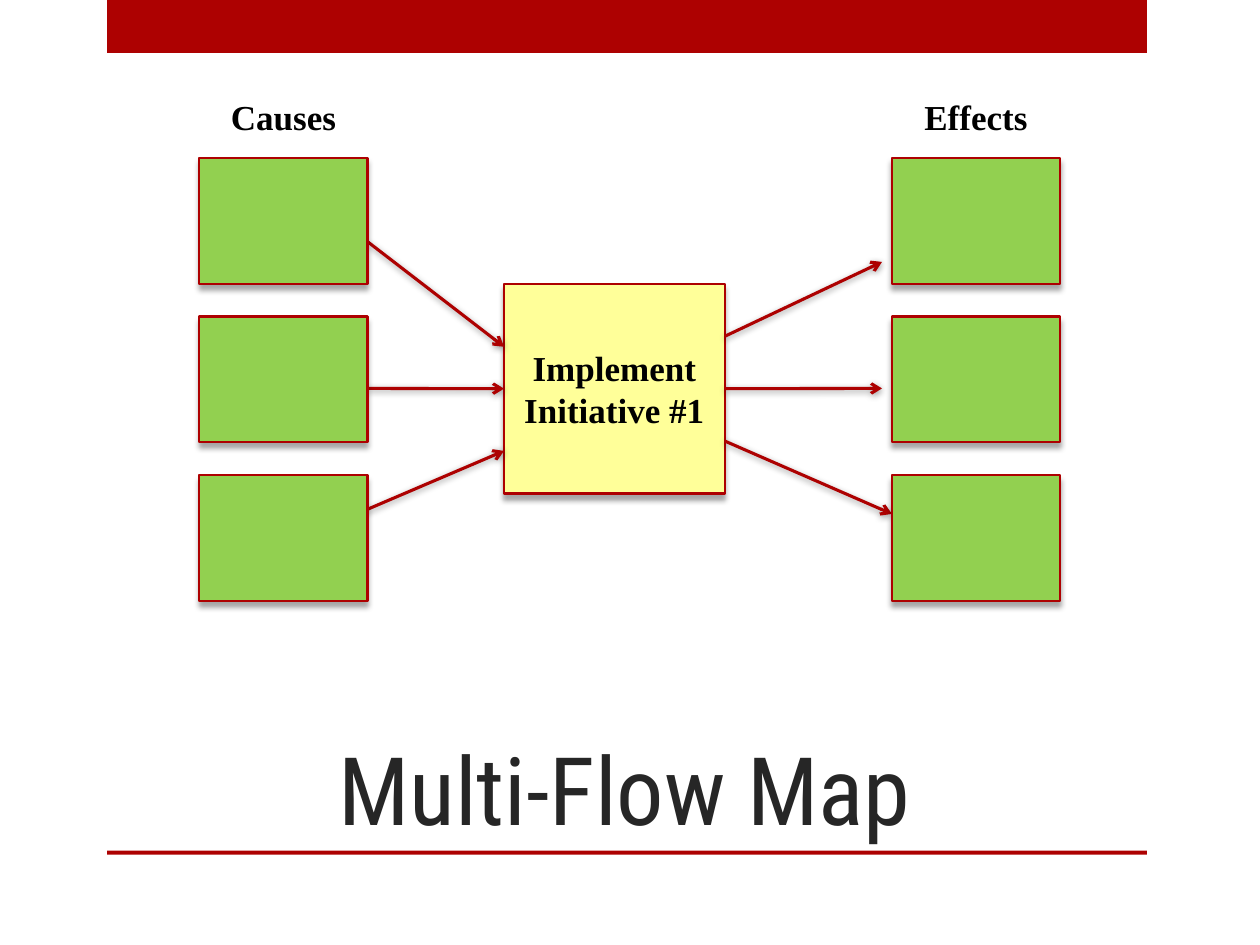
from lxml.etree import SubElement as Sub
from pptx import Presentation
from pptx.dml.color import RGBColor as RGB
from pptx.enum.shapes import MSO_CONNECTOR as Line, MSO_SHAPE as Kind
from pptx.enum.text import MSO_ANCHOR as Anchor, PP_ALIGN as Align
from pptx.oxml.ns import qn
from pptx.util import Cm, Pt

RED, GREEN, YELLOW = "AD0101", "92D050", "FFFF99"
SERIF = {"name": "Times New Roman", "size": Pt(20), "bold": True}
HEAD = {"name": "Roboto Condensed", "size": Pt(54), "bold": False}
BOX_W, BOX_H, TOP, STEP = 3.39, 2.54, 3.18, 3.2
LEFT, RIGHT, MID = 4.02, 17.98, 7.83


def tint(part, color):
    part.rgb = RGB.from_string(color)


def paint(part, color):
    part.solid()
    tint(part.fore_color, color)


def write(shape, text, font, color="000000", anchor=Anchor.TOP):
    frame = shape.text_frame
    frame.word_wrap = True
    frame.vertical_anchor = anchor
    para = frame.paragraphs[0]
    para.text = text
    para.alignment = Align.CENTER
    for key, value in font.items():
        setattr(para.font, key, value)
    tint(para.font.color, color)


def shade(shape, alpha, blur, dist, angle):
    props = shape._element.spPr
    glow = Sub(Sub(props, qn("a:effectLst")), qn("a:outerShdw"),
               blurRad=str(Pt(blur)), dist=str(Pt(dist)),
               dir=str(angle * 60000), rotWithShape="0")
    color = Sub(glow, qn("a:srgbClr"), val="000000")
    Sub(color, qn("a:alpha"), val=str(alpha * 1000))


def add_rect(slide, place, color):
    rect = slide.shapes.add_shape(Kind.RECTANGLE, *map(Cm, place))
    paint(rect.fill, color)
    return rect


def add_bar(slide, place):
    bar = add_rect(slide, place, RED)
    bar.line.fill.background()
    bar.shadow.inherit = False


def add_box(slide, place, color):
    box = add_rect(slide, place, color)
    paint(box.line.fill, RED)
    box.line.width = Pt(1.25)
    shade(box, 35, 3, 3, 90)
    return box


def add_arrow(slide, *ends):
    arrow = slide.shapes.add_connector(Line.STRAIGHT, *map(Cm, ends))
    paint(arrow.line.fill, RED)
    arrow.line.width = Pt(1.75)
    Sub(arrow.line._get_or_add_ln(), qn("a:tailEnd"), type="arrow")
    shade(arrow, 40, 4, 1, 88)
    return arrow


def add_label(slide, x, text):
    label = slide.shapes.add_textbox(Cm(x), Cm(1.81), Cm(BOX_W), Cm(1.12))
    write(label, text, SERIF)


def main():
    deck = Presentation()
    deck.slide_width, deck.slide_height = Cm(25.4), Cm(19.05)
    slide = deck.slides.add_slide(deck.slide_layouts[5])

    # Frame and title
    add_bar(slide, (2.16, 0, 20.96, 1.07))
    add_bar(slide, (2.16, 17.15, 20.96, 0.08))
    title = slide.shapes.title
    place = {"left": 2.11, "top": 12.7, "width": 20.96, "height": 4.45}
    for key, value in place.items():
        setattr(title, key, Cm(value))
    write(title, "Multi-Flow Map", HEAD, "262626", Anchor.BOTTOM)

    # Central event
    event = add_box(slide, (10.16, 5.72, 4.45, 4.23), YELLOW)
    write(event, "Implement Initiative #1", SERIF, anchor=Anchor.MIDDLE)

    # Arrows into and out of the event
    add_arrow(slide, 7.42, 4.88, 10.16, 6.99)
    add_arrow(slide, 7.19, 10.36, 10.16, 9.09)
    add_arrow(slide, 7.42, MID, 10.16, MID).end_connect(event, 1)
    add_arrow(slide, 14.61, 6.78, 17.78, 5.28)
    add_arrow(slide, 14.61, MID, 17.78, MID).begin_connect(event, 3)
    add_arrow(slide, 14.61, 8.89, 17.98, 10.36)

    # Columns of causes and effects
    for x, text in ((LEFT, "Causes"), (RIGHT, "Effects")):
        add_label(slide, x, text)
        for row in range(3):
            add_box(slide, (x, TOP + row * STEP, BOX_W, BOX_H), GREEN)

    deck.save("out.pptx")


if __name__ == "__main__":
    main()
